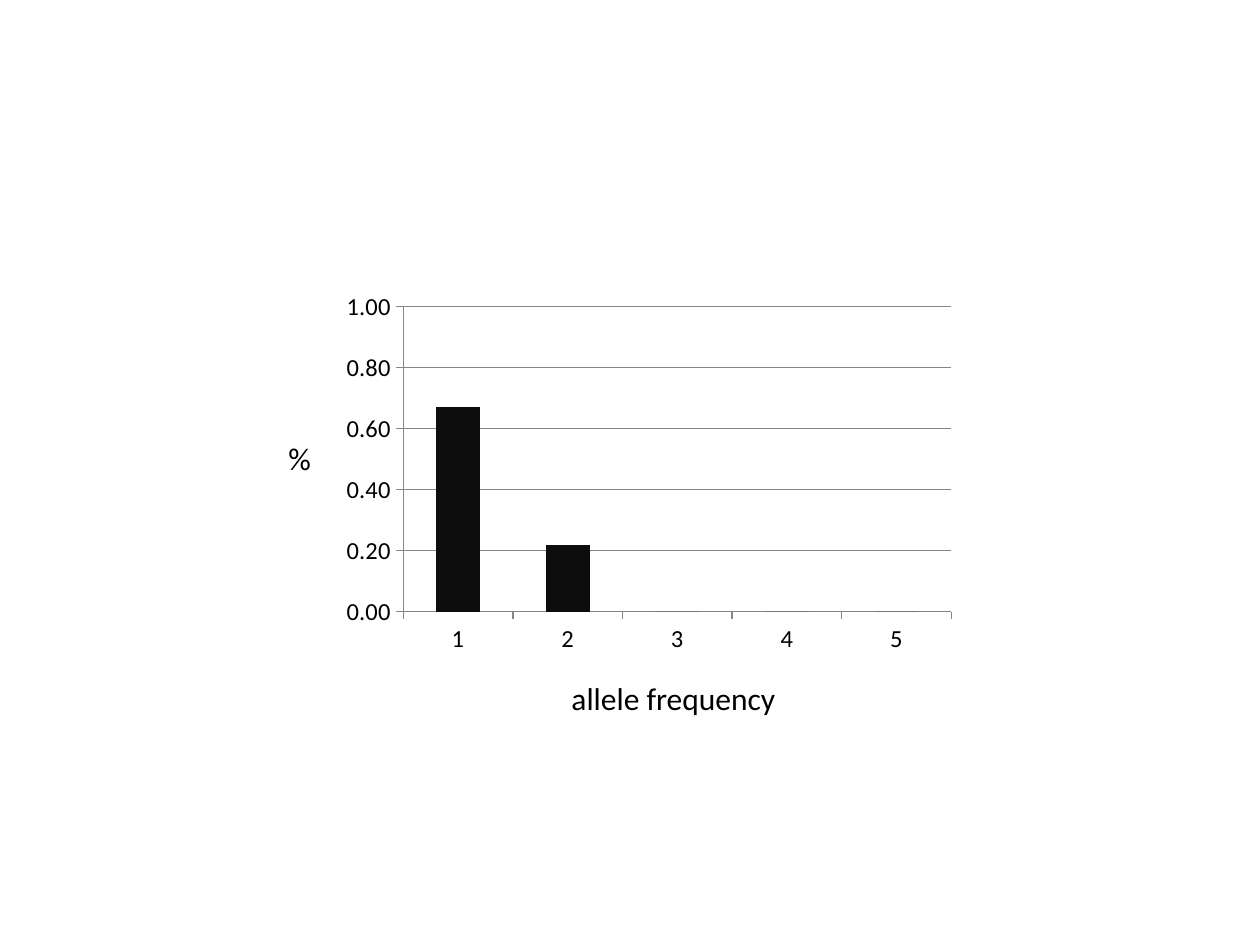
"""Build a slide with a column chart of allele frequencies."""
from pptx import Presentation
from pptx.chart.data import CategoryChartData
from pptx.dml.color import RGBColor
from pptx.enum.chart import XL_CHART_TYPE, XL_TICK_MARK
from pptx.enum.text import MSO_AUTO_SIZE
from pptx.util import Pt

PX = 914400 // 126
FONT = "Calibri"
CATS = ["1", "2", "3", "4", "5"]
VALS = [0.67, 0.22, 0, 0, 0]
CHART = (334, 284, 630, 378)
LABELS = [
    ("allele frequency", (559, 673, 232, 50)),
    ("%", (276, 433, 48, 50)),
]


def color(code):
    return RGBColor.from_string(code)


def style(font, size):
    font.name = FONT
    font.size = Pt(size)
    font.color.rgb = color("000000")


def place(box):
    return [n * PX for n in box]


def add_bars(slide):
    data = CategoryChartData(number_format="0.00")
    data.categories = CATS
    data.add_series("Series 1", VALS)
    kind = XL_CHART_TYPE.COLUMN_CLUSTERED
    chart = slide.shapes.add_chart(kind, *place(CHART), data).chart
    chart.has_legend = False
    chart.has_title = False
    style(chart.font, 10)
    plot = chart.plots[0]
    plot.gap_width = 150
    plot.vary_by_categories = False
    fill = plot.series[0].format.fill
    fill.solid()
    fill.fore_color.rgb = color("0D0D0D")
    scale = chart.value_axis
    scale.minimum_scale = 0
    scale.maximum_scale = 1
    scale.major_unit = 0.2
    scale.has_major_gridlines = True
    scale.tick_labels.number_format = "0.00"
    scale.tick_labels.number_format_is_linked = False
    lines = [scale.major_gridlines.format.line]
    for axis in (chart.category_axis, scale):
        axis.major_tick_mark = XL_TICK_MARK.OUTSIDE
        style(axis.tick_labels.font, 14)
        lines.append(axis.format.line)
    for line in lines:
        line.color.rgb = color("868686")
        line.width = Pt(0.75)


def add_label(slide, text, box):
    frame = slide.shapes.add_textbox(*place(box)).text_frame
    frame.text = text
    frame.word_wrap = False
    frame.auto_size = MSO_AUTO_SIZE.SHAPE_TO_FIT_TEXT
    style(frame.paragraphs[0].runs[0].font, 18)


def main():
    deck = Presentation()
    deck.slide_width, deck.slide_height = place((1260, 945))
    slide = deck.slides.add_slide(deck.slide_layouts[6])
    add_bars(slide)
    for text, box in LABELS:
        add_label(slide, text, box)
    deck.save("out.pptx")


if __name__ == "__main__":
    main()
